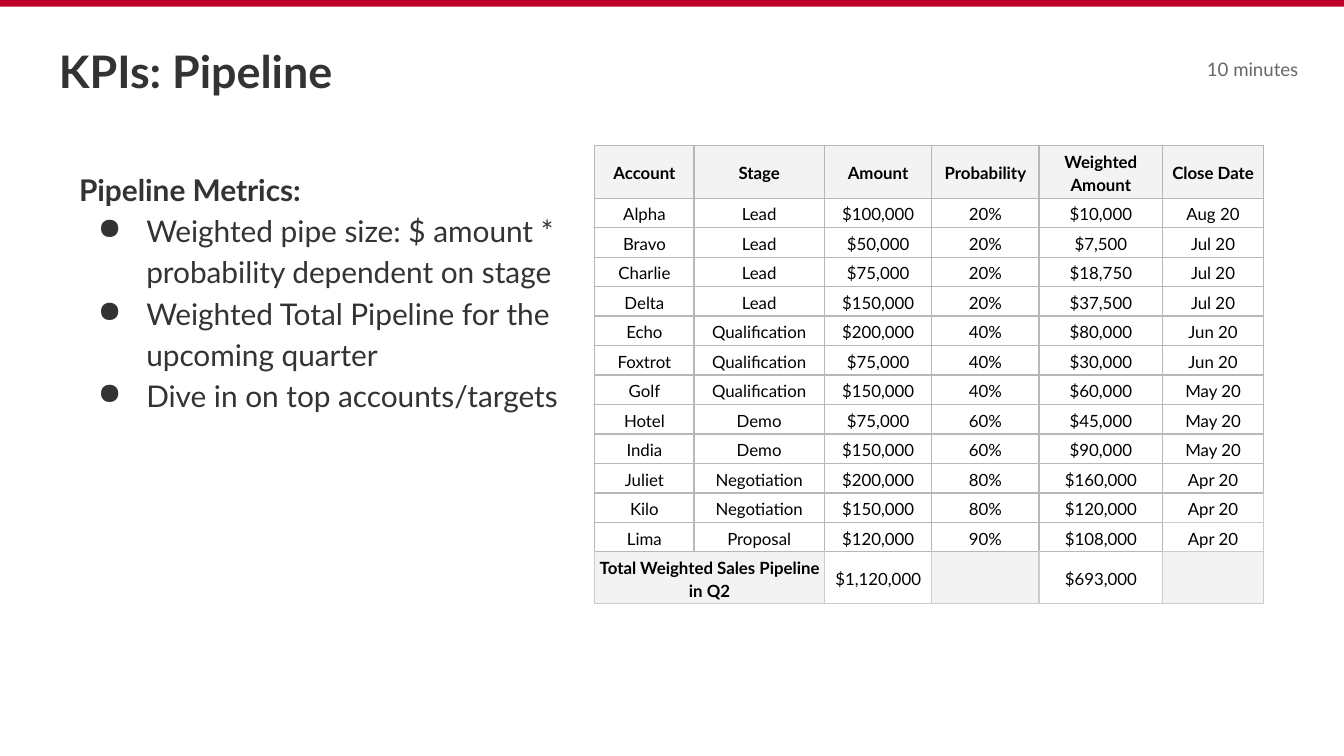
from dataclasses import dataclass

from lxml.etree import SubElement as Sub
from pptx import Presentation
from pptx.dml.color import RGBColor as RGB
from pptx.enum.shapes import MSO_SHAPE as Shape
from pptx.enum.text import MSO_ANCHOR as Anchor, PP_ALIGN as Align
from pptx.oxml.ns import qn
from pptx.util import Pt


@dataclass(frozen=True)
class Theme:
    font: str = "Lato"
    red: str = "BE0026"
    ink: str = "333333"
    muted: str = "666666"
    black: str = "000000"
    shade: str = "F3F3F3"
    rule: str = "B7B7B7"
    pale: str = "CCCCCC"
    title: float = 24
    body: float = 16
    note: float = 10
    cell: float = 9
    inset: float = 7.2
    lead: float = 1.15


THEME = Theme()

POINTS = [
    "Weighted pipe size: $ amount * probability dependent on stage",
    "Weighted Total Pipeline for the upcoming quarter",
    "Dive in on top accounts/targets",
]
HEAD = ["Account", "Stage", "Amount", "Probability", "Weighted Amount", "Close Date"]
DEALS = [
    ["Alpha", "Lead", "$100,000", "20%", "$10,000", "Aug 20"],
    ["Bravo", "Lead", "$50,000", "20%", "$7,500", "Jul 20"],
    ["Charlie", "Lead", "$75,000", "20%", "$18,750", "Jul 20"],
    ["Delta", "Lead", "$150,000", "20%", "$37,500", "Jul 20"],
    ["Echo", "Qualification", "$200,000", "40%", "$80,000", "Jun 20"],
    ["Foxtrot", "Qualification", "$75,000", "40%", "$30,000", "Jun 20"],
    ["Golf", "Qualification", "$150,000", "40%", "$60,000", "May 20"],
    ["Hotel", "Demo", "$75,000", "60%", "$45,000", "May 20"],
    ["India", "Demo", "$150,000", "60%", "$90,000", "May 20"],
    ["Juliet", "Negotiation", "$200,000", "80%", "$160,000", "Apr 20"],
    ["Kilo", "Negotiation", "$150,000", "80%", "$120,000", "Apr 20"],
    ["Lima", "Proposal", "$120,000", "90%", "$108,000", "Apr 20"],
]
TOTAL = ["Total Weighted Sales Pipeline in Q2", "", "$1,120,000", "", "$693,000", ""]
WIDTHS = [53.2, 69.8, 57.6, 57.4, 66.3, 54]
HEAD_H, DEAL_H, TOTAL_H = 28.2, 15.8, 18.7


def add_run(para, text, size, color, bold=False):
    run = para.add_run()
    run.text = text
    font = run.font
    font.name, font.size, font.bold = THEME.font, Pt(size), bold
    font.color.rgb = RGB.from_string(color)


def add_box(slide, box, anchor=Anchor.TOP):
    frame = slide.shapes.add_textbox(*map(Pt, box)).text_frame
    frame.word_wrap = True
    frame.vertical_anchor = anchor
    frame.margin_left = frame.margin_right = Pt(THEME.inset)
    frame.margin_top = frame.margin_bottom = Pt(THEME.inset)
    return frame


def add_bar(slide, box):
    bar = slide.shapes.add_shape(Shape.RECTANGLE, *map(Pt, box))
    bar.shadow.inherit = False
    bar.fill.solid()
    bar.fill.fore_color.rgb = RGB.from_string(THEME.red)
    bar.line.fill.background()


def add_title(slide, box):
    left, top, width, height = box
    frame = add_box(slide, box)
    add_run(frame.paragraphs[0], "KPIs: Pipeline", THEME.title, THEME.ink, True)
    # Time note at the right end of the title row
    note = add_box(slide, (left + width - 56, top + 14, 67.6, 14.4), Anchor.MIDDLE)
    add_run(note.paragraphs[0], "10 minutes", THEME.note, THEME.muted)


def set_bullet(para):
    props = para._p.get_or_add_pPr()
    props.set("marL", str(Pt(36)))
    props.set("indent", str(Pt(-25.9)))
    color = Sub(props, qn("a:buClr"))
    Sub(color, qn("a:srgbClr"), val=THEME.ink)
    Sub(props, qn("a:buChar"), char="●")


def add_list(slide, box):
    frame = add_box(slide, box)
    para = frame.paragraphs[0]
    para.line_spacing = THEME.lead
    add_run(para, "Pipeline Metrics:", THEME.body, THEME.ink, True)
    for text in POINTS:
        para = frame.add_paragraph()
        para.line_spacing = THEME.lead
        set_bullet(para)
        add_run(para, text, THEME.body, THEME.ink)


def set_edges(cell, pale):
    props = cell._tc.get_or_add_tcPr()
    for side in "LRTB":
        line = Sub(props, qn(f"a:ln{side}"), w=str(Pt(0.75)))
        fill = Sub(line, qn("a:solidFill"))
        Sub(fill, qn("a:srgbClr"), val=THEME.pale if side in pale else THEME.rule)


def pale_sides(row, col, last, end):
    """Sides with the lighter rule: total row and the lower right corner."""
    sides = "LRB" if row == last else ""
    if col == end and row >= last - 2:
        sides += "RB"
    if col == end and row >= last - 1:
        sides += "T"
    return sides


def fill_cell(cell, text, bold, shaded):
    cell.margin_left = cell.margin_right = Pt(2.2)
    cell.margin_top = cell.margin_bottom = Pt(1.4)
    cell.vertical_anchor = Anchor.MIDDLE
    if shaded:
        cell.fill.solid()
        cell.fill.fore_color.rgb = RGB.from_string(THEME.shade)
    else:
        cell.fill.background()
    if text:
        para = cell.text_frame.paragraphs[0]
        para.alignment = Align.CENTER
        para.line_spacing = THEME.lead
        add_run(para, text, THEME.cell, THEME.black, bold)


def add_deals(slide, left, top):
    rows = [HEAD, *DEALS, TOTAL]
    highs = [HEAD_H] + [DEAL_H] * len(DEALS) + [TOTAL_H]
    last, end = len(rows) - 1, len(HEAD) - 1
    size = (left, top, sum(WIDTHS), sum(highs))
    table = slide.shapes.add_table(len(rows), len(HEAD), *map(Pt, size)).table
    table.first_row = table.horz_banding = False
    for col, width in zip(table.columns, WIDTHS):
        col.width = Pt(width)
    for row, high in zip(table.rows, highs):
        row.height = Pt(high)
    for r, row in enumerate(rows):
        for c, text in enumerate(row):
            cell = table.cell(r, c)
            bold = r == 0 or (r == last and c == 0)
            shaded = bold or not text
            set_edges(cell, pale_sides(r, c, last, end))
            fill_cell(cell, text, bold, shaded)
    # Total label spans the first two columns
    label = table.cell(last, 0)
    label.merge(table.cell(last, 1))
    label.vertical_anchor = Anchor.BOTTOM


def main():
    deck = Presentation()
    deck.slide_width, deck.slide_height = Pt(720), Pt(405)
    slide = deck.slides.add_slide(deck.slide_layouts[6])
    add_bar(slide, (0, 0, 720, 3.6))
    add_title(slide, (24.5, 16, 671, 45))
    add_list(slide, (35.3, 82, 304, 149))
    add_deals(slide, 318.6, 78)
    deck.save("out.pptx")


if __name__ == "__main__":
    main()
